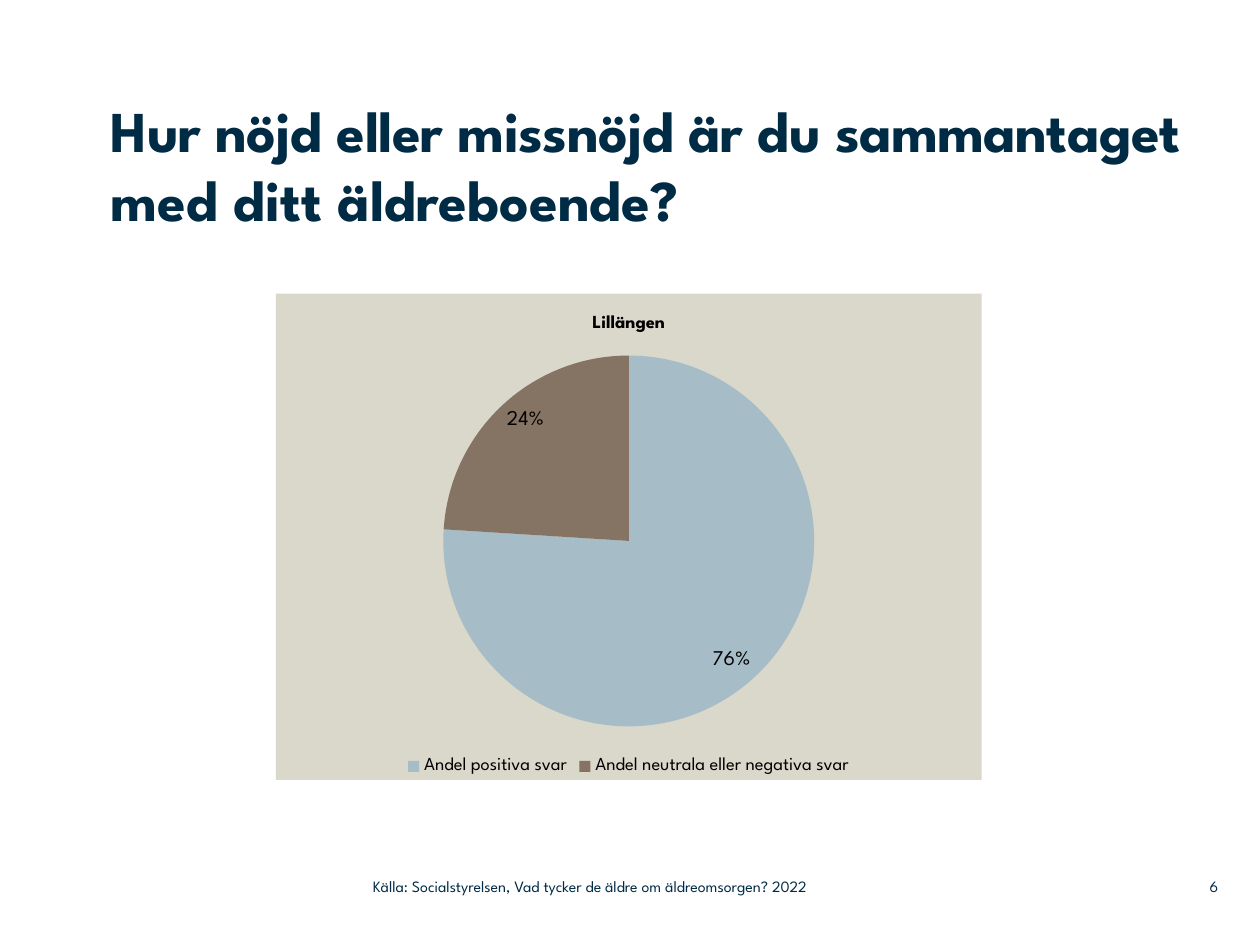
from dataclasses import dataclass

from pptx import Presentation
from pptx.chart.data import CategoryChartData
from pptx.dml.color import RGBColor
from pptx.enum.chart import XL_CHART_TYPE, XL_LABEL_POSITION, XL_LEGEND_POSITION
from pptx.enum.text import MSO_ANCHOR, MSO_AUTO_SIZE, PP_ALIGN
from pptx.oxml import parse_xml
from pptx.oxml.ns import nsdecls
from pptx.util import Inches, Pt

WIDTH, HEIGHT = 10, 7.5
FONT = "League Spartan"
COLORS = {
    "navy": "002B45",
    "text": "000000",
    "panel": "DAD7CB",
    "positive": "A6BCC6",
    "other": "857363",
}


@dataclass
class Box:
    left: float
    top: float
    width: float
    height: float

    def lengths(self) -> tuple:
        return (
            Inches(self.left * WIDTH),
            Inches(self.top * HEIGHT),
            Inches(self.width * WIDTH),
            Inches(self.height * HEIGHT),
        )


@dataclass
class FooterItem:
    text: str
    left: float
    width: float
    alignment: PP_ALIGN


@dataclass
class Answer:
    label: str
    percent: int
    color: str


FOOTER_TOP, FOOTER_HEIGHT = 0.9187, 0.0387
TITLE_BOX = Box(0.088, 0.1, 0.883, 0.1893)
CHART_BOX = Box(0.219, 0.3107, 0.56, 0.5147)
TITLE_RUNS = (
    ("Hur nöjd eller missnöjd är du sammantaget ", -30),
    ("med ditt äldreboende?", 0),
)
FOOTER = (
    FooterItem("Källa: Socialstyrelsen, Vad tycker de äldre om äldreomsorgen? 2022",
               0.296, 0.443, PP_ALIGN.LEFT),
    FooterItem("6", 0.92, 0.047, PP_ALIGN.RIGHT),
)
ANSWERS = (
    Answer("Andel positiva svar", 76, "positive"),
    Answer("Andel neutrala eller negativa svar", 24, "other"),
)


def style_font(font, size: float, color: str, bold: bool = False) -> None:
    font.name = FONT
    font.size = Pt(size)
    font.bold = bold
    font.color.rgb = RGBColor.from_string(COLORS[color])


def prepare_frame(text_frame, anchor: MSO_ANCHOR) -> None:
    text_frame.margin_left = text_frame.margin_right = 0
    text_frame.margin_top = text_frame.margin_bottom = 0
    text_frame.auto_size = MSO_AUTO_SIZE.NONE
    text_frame.word_wrap = True
    text_frame.vertical_anchor = anchor


def fill_title(shape) -> None:
    shape.left, shape.top, shape.width, shape.height = TITLE_BOX.lengths()
    prepare_frame(shape.text_frame, MSO_ANCHOR.TOP)
    paragraph = shape.text_frame.paragraphs[0]
    paragraph.alignment = PP_ALIGN.LEFT
    for text, spacing in TITLE_RUNS:
        run = paragraph.add_run()
        run.text = text
        style_font(run.font, 33, "navy", bold=True)
        run.font._element.set("spc", str(spacing))


def add_footer(slide, item: FooterItem) -> None:
    box = Box(item.left, FOOTER_TOP, item.width, FOOTER_HEIGHT)
    text_frame = slide.shapes.add_textbox(*box.lengths()).text_frame
    prepare_frame(text_frame, MSO_ANCHOR.MIDDLE)
    text_frame.text = item.text
    paragraph = text_frame.paragraphs[0]
    paragraph.alignment = item.alignment
    style_font(paragraph.runs[0].font, 9, "navy")


def add_answer_chart(slide) -> None:
    data = CategoryChartData()
    data.categories = [answer.label for answer in ANSWERS]
    data.add_series("Series 1", [answer.percent for answer in ANSWERS])
    chart = slide.shapes.add_chart(XL_CHART_TYPE.PIE, *CHART_BOX.lengths(), data).chart
    style_font(chart.font, 18, "text")

    chart.has_title = True
    title_frame = chart.chart_title.text_frame
    title_frame.text = "Lillängen"
    style_font(title_frame.paragraphs[0].runs[0].font, 10.5, "text", bold=True)

    chart.has_legend = True
    chart.legend.position = XL_LEGEND_POSITION.BOTTOM
    chart.legend.include_in_layout = False
    style_font(chart.legend.font, 10.5, "text")

    plot = chart.plots[0]
    plot.vary_by_categories = True
    series = plot.series[0]
    for index, answer in enumerate(ANSWERS):
        point_format = series.points[index].format
        point_format.fill.solid()
        point_format.fill.fore_color.rgb = RGBColor.from_string(COLORS[answer.color])
        point_format.line.fill.background()

    labels = series.data_labels
    labels.show_percentage = True
    labels.show_value = False
    labels.number_format = "0%"
    labels.number_format_is_linked = False
    labels.position = XL_LABEL_POSITION.INSIDE_END
    style_font(labels.font, 12, "text")

    background = parse_xml(
        f'<c:spPr {nsdecls("c", "a")}><a:solidFill><a:srgbClr val="{COLORS["panel"]}"/>'
        "</a:solidFill><a:ln><a:noFill/></a:ln></c:spPr>"
    )
    chart.element.chart.addnext(background)


def main() -> None:
    presentation = Presentation()
    presentation.slide_width = Inches(WIDTH)
    presentation.slide_height = Inches(HEIGHT)
    slide = presentation.slides.add_slide(presentation.slide_layouts[5])
    fill_title(slide.shapes.title)
    add_answer_chart(slide)
    for item in FOOTER:
        add_footer(slide, item)
    presentation.save("out.pptx")


if __name__ == "__main__":
    main()
